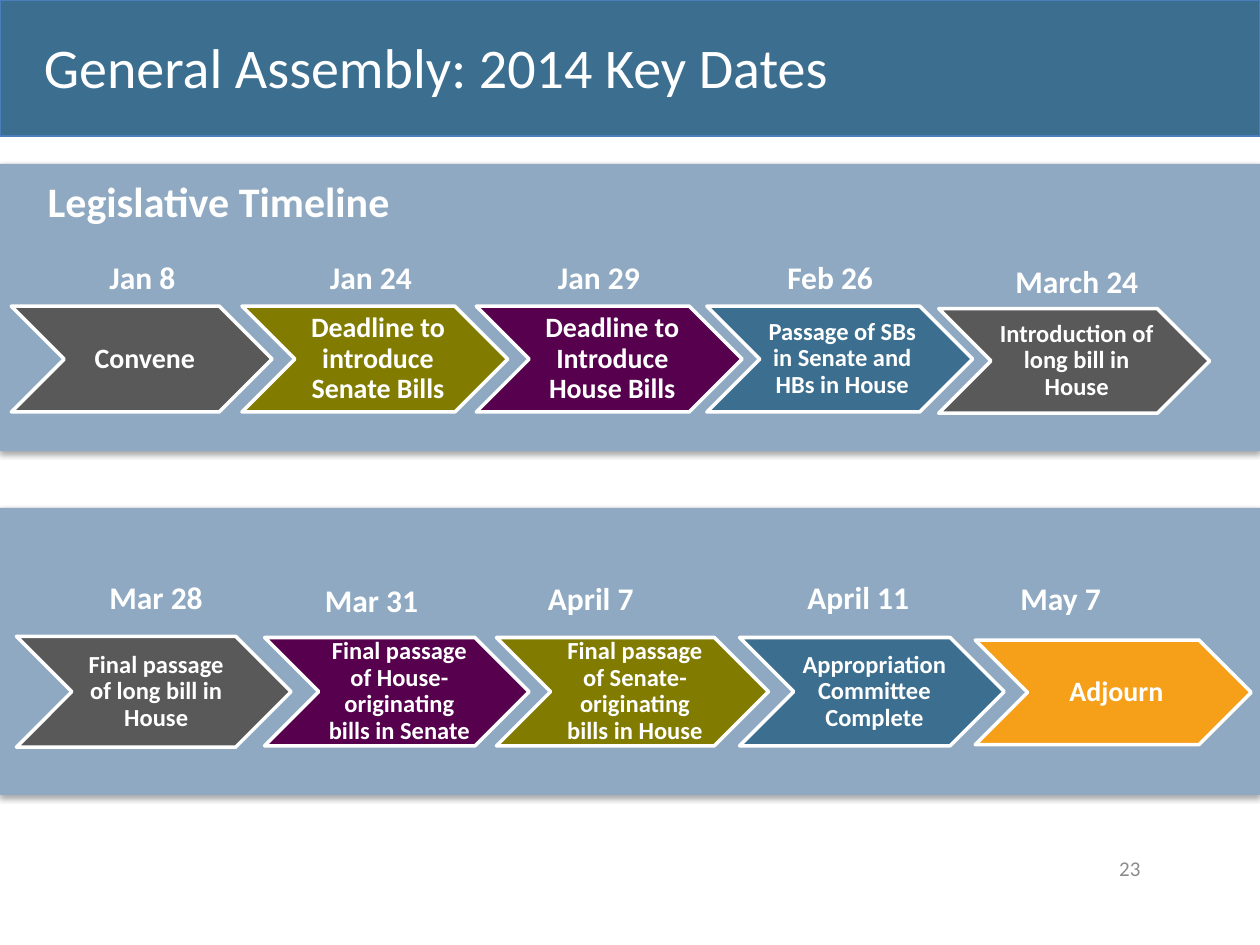
from lxml import etree
from pptx import Presentation
from pptx.dml.color import RGBColor
from pptx.enum.shapes import MSO_SHAPE
from pptx.enum.text import MSO_ANCHOR, PP_ALIGN
from pptx.util import Inches, Pt

RECT, CHEVRON = MSO_SHAPE.RECTANGLE, MSO_SHAPE.CHEVRON
LEFT, CENTER, RIGHT = PP_ALIGN.LEFT, PP_ALIGN.CENTER, PP_ALIGN.RIGHT
TOP, MIDDLE = MSO_ANCHOR.TOP, MSO_ANCHOR.MIDDLE
NS = "http://schemas.openxmlformats.org/drawingml/2006/main"

COLORS = {
    "blue": "3B6E8F", "edge": "4B7EBC", "band": "8EA9C1", "gray": "595959",
    "olive": "817C00", "plum": "56004E", "gold": "F6A01A",
    "white": "FFFFFF", "number": "8C8C8C",
}
BANDS = [4.03, 1.3]
STEPS = [
    ("Convene", "gray", 16, (0.09, 2.43, 2.07, 0.84)),
    ("Deadline to introduce Senate Bills", "olive", 16, (1.92, 2.43, 2.11, 0.84)),
    ("Deadline to Introduce House Bills", "plum", 16, (3.78, 2.43, 2.11, 0.84)),
    ("Passage of SBs in Senate and HBs in House", "blue", 14, (5.61, 2.43, 2.11, 0.84)),
    ("Introduction of long bill in House", "gray", 14, (7.45, 2.45, 2.15, 0.83)),
    ("Final passage of long bill in House", "gray", 14, (0.13, 5.05, 2.18, 0.88)),
    ("Final passage of House-originating bills in Senate", "plum", 14, (2.1, 5.06, 2.1, 0.86)),
    ("Final passage of Senate-originating bills in House", "olive", 14, (3.94, 5.06, 2.16, 0.86)),
    ("Appropriation Committee Complete", "blue", 14, (5.87, 5.06, 2.1, 0.86)),
    ("Adjourn", "gold", 16, (7.74, 5.08, 2.19, 0.83)),
]
DATES = [
    ("Jan 8", 0.77, 2, 0.73, False),
    ("Jan 24", 2.52, 2, 1.32, True),
    ("Jan 29", 4.33, 2, 1.18, True),
    ("Feb 26", 6.15, 2, 1.27, True),
    ("March 24", 7.96, 2.03, 1.27, True),
    ("Mar 28", 0.77, 4.54, 0.95, False),
    ("Mar 31", 2.48, 4.56, 0.95, False),
    ("April 7", 4.25, 4.55, 0.89, False),
    ("April 11", 6.31, 4.54, 1.02, False),
    ("May 7", 8, 4.55, 0.85, False),
]


def rgb(name):
    return RGBColor.from_string(COLORS[name])


def write(shape, text, size, color="white", bold=True, align=LEFT, anchor=TOP, wrap=True):
    frame = shape.text_frame
    frame.word_wrap, frame.vertical_anchor = wrap, anchor
    para = frame.paragraphs[0]
    para.text, para.alignment = text, align
    font = para.runs[0].font
    for key, value in {"name": "Calibri", "size": Pt(size), "bold": bold}.items():
        setattr(font, key, value)
    font.color.rgb = rgb(color)
    return frame


def label(slide, box, text, size, **style):
    write(slide.shapes.add_textbox(*map(Inches, box)), text, size, **style)


def block(slide, kind, box, fill, edge=None, width=0.75):
    shape = slide.shapes.add_shape(kind, *map(Inches, box))
    shape.shadow.inherit = False
    shape.fill.solid()
    shape.fill.fore_color.rgb = rgb(fill)
    if edge:
        shape.line.color.rgb = rgb(edge)
        shape.line.width = Pt(width)
    else:
        shape.line.fill.background()
    return shape


def shade(shape):
    effects = shape.element.spPr.find(f"{{{NS}}}effectLst")
    effects.append(etree.fromstring(
        f'<a:outerShdw xmlns:a="{NS}" blurRad="{Pt(3.1)}" dist="{Pt(1.8)}" '
        'dir="5400000" rotWithShape="0"><a:srgbClr val="000000">'
        '<a:alpha val="35000"/></a:srgbClr></a:outerShdw>'))


def step(slide, text, fill, size, box):
    shape = block(slide, CHEVRON, box, fill, "white", 2)
    frame = write(shape, text, size, align=CENTER, anchor=MIDDLE)
    frame.paragraphs[0].line_spacing = 0.9
    pads = {"left": 0.07 if size == 16 else 0.06, "right": 0.02, "top": 0.02, "bottom": 0.02}
    for side, pad in pads.items():
        setattr(frame, f"margin_{side}", Inches(pad))


def main():
    deck = Presentation()
    deck.slide_width, deck.slide_height = Inches(10), Inches(7.5)
    slide = deck.slides.add_slide(deck.slide_layouts[6])
    block(slide, RECT, (0, 0, 10, 1.08), "blue", "edge")
    label(slide, (0.25, 0.21, 9, 1.02), "General Assembly: 2014 Key Dates", 32, bold=False)
    label(slide, (7.41, 6.69, 1.74, 0.4), "23", 12, color="number", bold=False,
          align=RIGHT, anchor=MIDDLE)
    for top in BANDS:
        shade(block(slide, RECT, (0, top, 10, 2.28), "band"))
    for item in STEPS:
        step(slide, *item)
    for text, left, top, width, wrap in DATES:
        label(slide, (left, top, width, 0.4), text, 18, wrap=wrap)
    label(slide, (0.28, 1.34, 2.95, 0.5), "Legislative Timeline", 24, wrap=False)
    deck.save("out.pptx")


if __name__ == "__main__":
    main()
